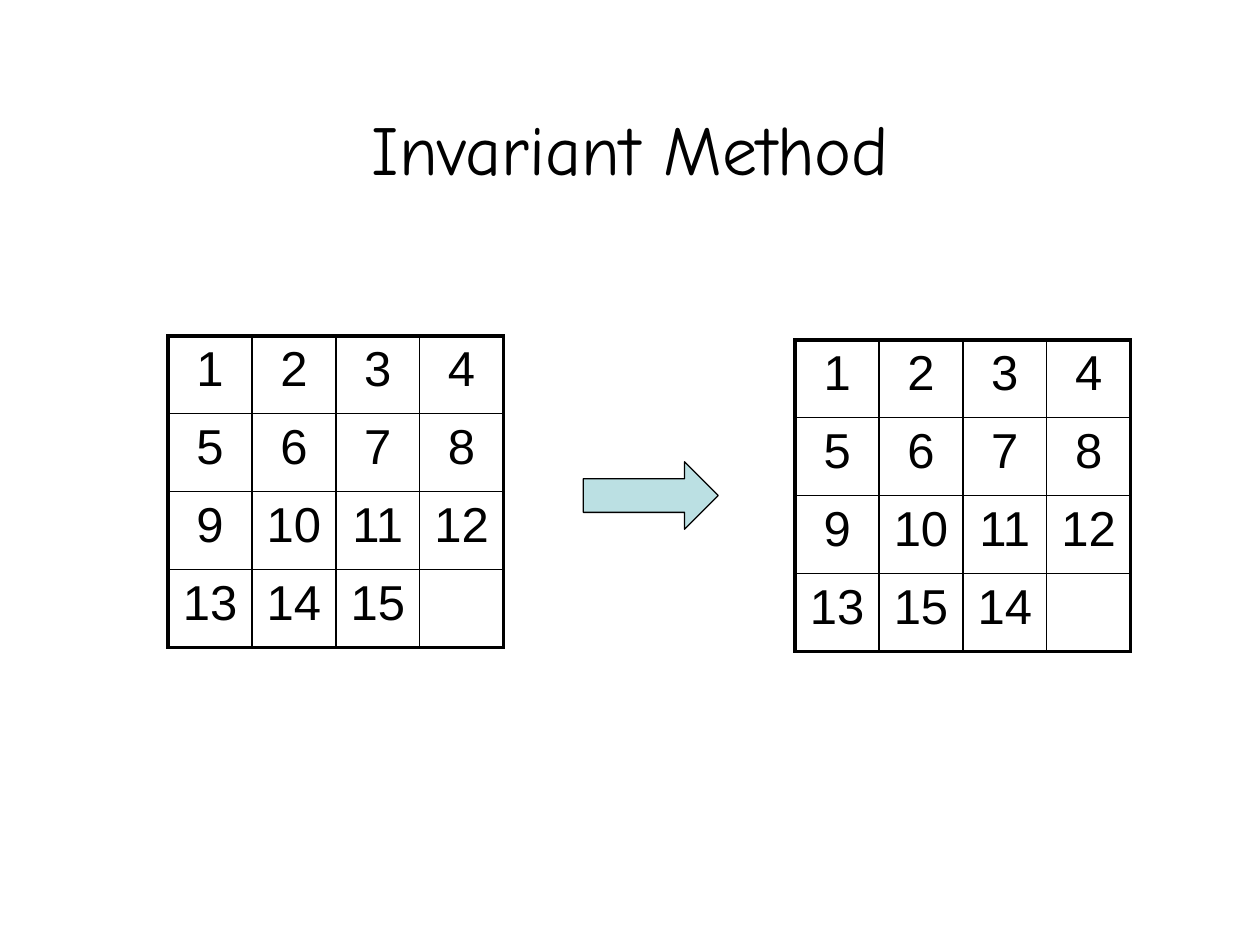
from dataclasses import dataclass

from lxml.etree import SubElement
from pptx import Presentation
from pptx.dml.color import RGBColor
from pptx.enum.shapes import MSO_SHAPE
from pptx.enum.text import MSO_ANCHOR, PP_ALIGN
from pptx.oxml.ns import qn
from pptx.util import Cm, Pt


@dataclass(frozen=True)
class Theme:
    ink: str = "000000"
    arrow: str = "BBE0E3"
    title_font: str = "Comic Neue"
    tile_font: str = "Arial"
    title_size: float = 40
    tile_size: float = 28
    outer_line: float = 2.25
    inner_line: float = 1
    arrow_line: float = 0.75


THEME = Theme()
COLUMN_WIDTH = Cm(1.69)
ROW_HEIGHT = Cm(1.57)

FIRST_ROWS = [["1", "2", "3", "4"], ["5", "6", "7", "8"], ["9", "10", "11", "12"]]
SOLVED_BOARD = FIRST_ROWS + [["13", "14", "15", ""]]
SWAPPED_BOARD = FIRST_ROWS + [["13", "15", "14", ""]]


def write_text(frame, text, *, font, size, color=THEME.ink, align=PP_ALIGN.CENTER):
    para = frame.paragraphs[0]
    para.alignment = align
    span = para.add_run()
    span.text = text
    span.font.name = font
    span.font.size = Pt(size)
    span.font.color.rgb = RGBColor.from_string(color)


def add_title(page, text):
    title = page.shapes.title
    title.left, title.top, title.width, title.height = Cm(4.45), Cm(1.7), Cm(16.51), Cm(2.54)
    title.text_frame.vertical_anchor = MSO_ANCHOR.MIDDLE
    write_text(title.text_frame, text, font=THEME.title_font, size=THEME.title_size)


def set_border(cell, side, width):
    properties = cell._tc.get_or_add_tcPr()
    line = SubElement(properties, qn(f"a:ln{side}"), w=str(Pt(width)))
    fill = SubElement(line, qn("a:solidFill"))
    SubElement(fill, qn("a:srgbClr"), val=THEME.ink)


def add_board(page, rows, left, top):
    row_count, column_count = len(rows), len(rows[0])
    frame = page.shapes.add_table(row_count, column_count, left, top,
                                  COLUMN_WIDTH * column_count, ROW_HEIGHT * row_count)
    table = frame.table
    table.first_row = table.horz_banding = False
    for column in table.columns:
        column.width = COLUMN_WIDTH
    for y, labels in enumerate(rows):
        table.rows[y].height = ROW_HEIGHT
        for x, label in enumerate(labels):
            cell = table.cell(y, x)
            # Heavy lines on the outside of the board, thin lines inside
            edges = {"L": x == 0, "R": x == column_count - 1,
                     "T": y == 0, "B": y == row_count - 1}
            for side, is_outer in edges.items():
                set_border(cell, side, THEME.outer_line if is_outer else THEME.inner_line)
            cell.fill.background()
            if label:
                write_text(cell.text_frame, label, font=THEME.tile_font, size=THEME.tile_size)


def add_arrow(page, left, top, width, height):
    arrow = page.shapes.add_shape(MSO_SHAPE.RIGHT_ARROW, left, top, width, height)
    arrow.shadow.inherit = False
    arrow.fill.solid()
    arrow.fill.fore_color.rgb = RGBColor.from_string(THEME.arrow)
    arrow.line.color.rgb = RGBColor.from_string(THEME.ink)
    arrow.line.width = Pt(THEME.arrow_line)


def main():
    deck = Presentation()
    deck.slide_width, deck.slide_height = Cm(25.4), Cm(19.05)
    page = deck.slides.add_slide(deck.slide_layouts[0])

    # Title, without the layout's subtitle
    subtitle = page.placeholders[1].element
    subtitle.getparent().remove(subtitle)
    add_title(page, "Invariant Method")

    # Boards before and after the swap
    add_board(page, SOLVED_BOARD, Cm(3.39), Cm(6.77))
    add_board(page, SWAPPED_BOARD, Cm(16.03), Cm(6.85))
    add_arrow(page, Cm(11.76), Cm(9.31), Cm(2.72), Cm(1.36))

    deck.save("out.pptx")


if __name__ == "__main__":
    main()
